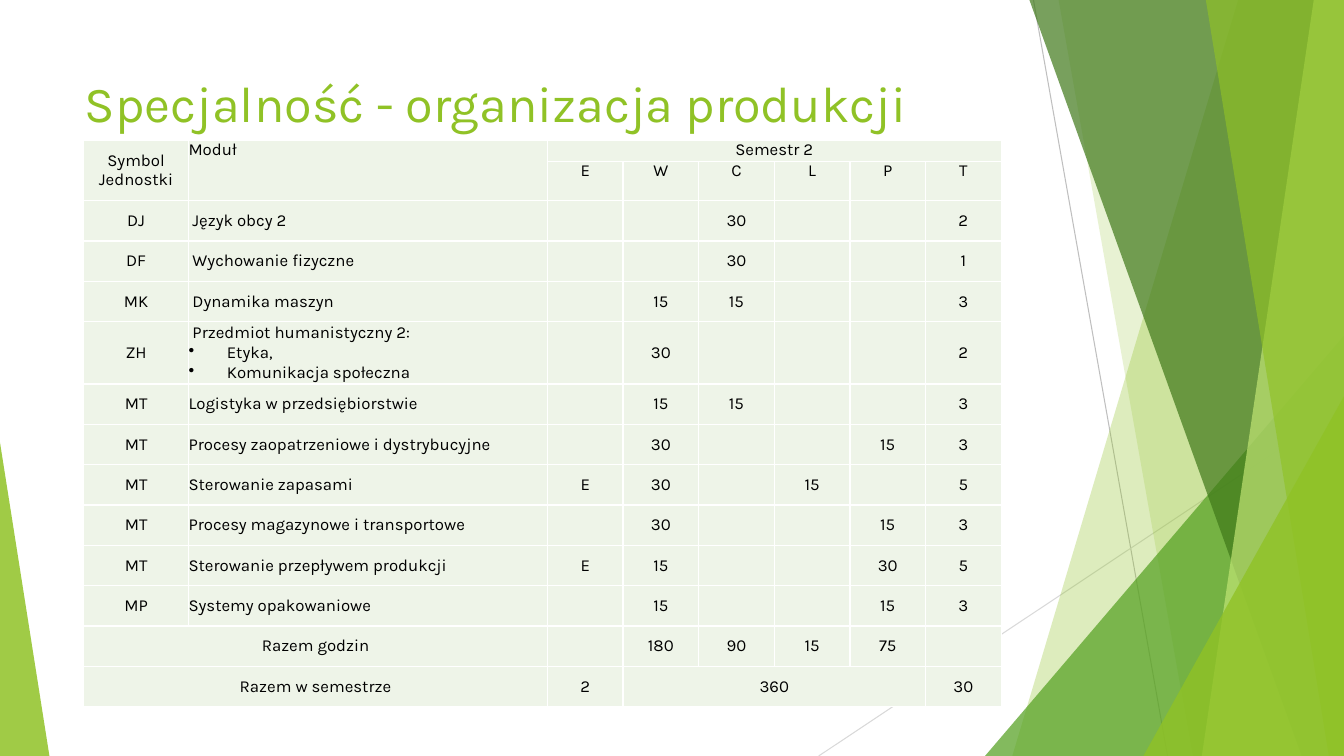
from dataclasses import dataclass

from lxml import etree
from pptx import Presentation
from pptx.dml.color import RGBColor
from pptx.enum.shapes import MSO_CONNECTOR, MSO_SHAPE
from pptx.enum.text import MSO_ANCHOR, MSO_AUTO_SIZE, PP_ALIGN
from pptx.oxml.ns import qn
from pptx.util import Inches, Pt

STRAIGHT = MSO_CONNECTOR.STRAIGHT
TRIANGLE = MSO_SHAPE.ISOSCELES_TRIANGLE
TOP, MIDDLE = MSO_ANCHOR.TOP, MSO_ANCHOR.MIDDLE
LEFT, CENTER = PP_ALIGN.LEFT, PP_ALIGN.CENTER
NO_AUTOFIT = MSO_AUTO_SIZE.NONE

FONT = "Karla"
GREEN, DARK, MID, PALE = "90C226", "3F7819", "54A021", "C0E474"
CELL_FILL, WHITE, BLACK = "EEF4E8", "FFFFFF", "000000"

HAIRLINES = [(10.25, 0, 11.58, 7.5, "BFBFBF"), (13.33, 4.03, 8.12, 7.5, "D9D9D9")]
BACK_RIBBONS = [(12.28, 10.04, GREEN, 30), (10.5, 11.83, GREEN, 20)]
BACK_TRIANGLES = [(9.77, 3.33, 3.56, 1, MID, 72)]
FRONT_RIBBONS = [(10.21, 12.91, DARK, 70), (13.03, 11.92, PALE, 70), (11.96, 13.18, GREEN, 65)]
FRONT_TRIANGLES = [(11.34, 3.93, 1.99, 1, GREEN, 80), (0, 4.39, 0.49, 0, GREEN, 85)]

COLUMN_WIDTHS = [1.04, 3.56] + [0.75] * 6
ROW_HEIGHTS = [0.21] * 2 + [0.4] * 3 + [0.62] + [0.4] * 8
MERGES = [(0, 0, 1, 0), (0, 1, 1, 1), (0, 2, 0, 7), (12, 0, 12, 1), (13, 0, 13, 1), (13, 3, 13, 6)]
HEADER_ROWS = 2
TOTAL_ROWS = 2
ROWS = [
    ["Symbol\vJednostki", "Moduł", "Semestr 2", "", "", "", "", ""],
    ["", "", "E", "W", "C", "L", "P", "T"],
    ["DJ", " Język obcy 2", "", "", "30", "", "", "2"],
    ["DF", " Wychowanie fizyczne", "", "", "30", "", "", "1"],
    ["MK", " Dynamika maszyn", "", "15", "15", "", "", "3"],
    ["ZH", " Przedmiot humanistyczny 2:\nEtyka,\nKomunikacja społeczna", "", "30", "", "", "", "2"],
    ["MT", "Logistyka w przedsiębiorstwie", "", "15", "15", "", "", "3"],
    ["MT", "Procesy zaopatrzeniowe i dystrybucyjne", "", "30", "", "", "15", "3"],
    ["MT", "Sterowanie zapasami", "E", "30", "", "15", "", "5"],
    ["MT", "Procesy magazynowe i transportowe", "", "30", "", "", "15", "3"],
    ["MT", "Sterowanie przepływem produkcji", "E", "15", "", "", "30", "5"],
    ["MP", "Systemy opakowaniowe", "", "15", "", "", "15", "3"],
    ["Razem godzin", "", "", "180", "90", "15", "75", ""],
    ["Razem w semestrze", "", "2", "360", "", "", "", "30"],
]


@dataclass
class Box:
    left: float
    top: float
    width: float
    height: float

    def place(self, x, y):
        return Inches(self.left + x), Inches(self.top + y)


def color(value):
    return RGBColor.from_string(value)


def apply(target, **values):
    for name, value in values.items():
        setattr(target, name, value)


def style_runs(para, size, shade):
    for span in para.runs:
        apply(span.font, name=FONT, size=Pt(size))
        span.font.color.rgb = color(shade)


def paint(shape, shade, opacity):
    shape.shadow.inherit = False
    shape.line.fill.background()
    shape.fill.solid()
    shape.fill.fore_color.rgb = color(shade)
    tint = shape.fill._xPr.find(qn("a:solidFill"))[0]
    etree.SubElement(tint, qn("a:alpha"), val=str(opacity * 1000))


def add_hairlines(group, box):
    for x1, y1, x2, y2, shade in HAIRLINES:
        line = group.shapes.add_connector(STRAIGHT, *box.place(x1, y1), *box.place(x2, y2))
        line.line.width = Pt(0.75)
        line.line.color.rgb = color(shade)
        etree.SubElement(line._element.spPr, qn("a:effectLst"))


def add_ribbons(group, box, ribbons):
    for top_x, bottom_x, shade, opacity in ribbons:
        outline = group.shapes.build_freeform(*box.place(top_x, 0), scale=1.0)
        corners = [(box.width, 0), (box.width, box.height), (bottom_x, box.height)]
        outline.add_line_segments([box.place(*corner) for corner in corners], close=True)
        paint(outline.convert_to_shape(), shade, opacity)


def add_triangles(group, box, triangles):
    for x, y, width, apex, shade, opacity in triangles:
        triangle = group.shapes.add_shape(
            TRIANGLE, *box.place(x, y), Inches(width), Inches(box.height - y))
        triangle.adjustments[0] = apex
        paint(triangle, shade, opacity)


def add_backdrop(page, box):
    group = page.shapes.add_group_shape()
    add_hairlines(group, box)
    add_ribbons(group, box, BACK_RIBBONS)
    add_triangles(group, box, BACK_TRIANGLES)
    add_ribbons(group, box, FRONT_RIBBONS)
    add_triangles(group, box, FRONT_TRIANGLES)


def add_title(page, box, text):
    title = page.shapes.title
    apply(title, left=Inches(box.left), top=Inches(box.top),
          width=Inches(box.width), height=Inches(box.height))
    frame = title.text_frame
    apply(frame, text=text, word_wrap=True, auto_size=NO_AUTOFIT, vertical_anchor=TOP)
    frame.paragraphs[0].alignment = LEFT
    style_runs(frame.paragraphs[0], 36, GREEN)


def add_bullet(para):
    props = para._p.get_or_add_pPr()
    props.set("marL", str(Inches(0.38)))
    props.set("indent", str(Inches(-0.38)))
    etree.SubElement(props, qn("a:buChar"), char="•")


def add_borders(cell):
    props = cell._tc.get_or_add_tcPr()
    for index, side in enumerate(("lnL", "lnR", "lnT", "lnB")):
        line = etree.Element(qn("a:" + side), w=str(Pt(1)))
        fill = etree.SubElement(line, qn("a:solidFill"))
        etree.SubElement(fill, qn("a:srgbClr"), val=WHITE)
        props.insert(index, line)


def cell_spacing(row, column):
    if row < HEADER_ROWS:
        return {0: (4, 2), 1: (9, 0)}.get(column, (2, 2))
    if row >= len(ROWS) - TOTAL_ROWS:
        return 1, 1
    return 0.5, 0.5


def fill_cell(cell, row, column, text):
    apply(cell, margin_left=0, margin_right=0, margin_top=0, margin_bottom=0,
          vertical_anchor=TOP if row < HEADER_ROWS and column else MIDDLE)
    cell.fill.solid()
    cell.fill.fore_color.rgb = color(CELL_FILL)
    add_borders(cell)
    if not text:
        return
    cell.text_frame.text = text
    paras = cell.text_frame.paragraphs
    before, after = (0, 0) if len(paras) > 1 else cell_spacing(row, column)
    for index, para in enumerate(paras):
        apply(para, alignment=LEFT if column == 1 else CENTER,
              space_before=Pt(before), space_after=Pt(after))
        style_runs(para, 12, BLACK)
        if index:
            add_bullet(para)


def add_module_table(page, box):
    frame = page.shapes.add_table(
        len(ROWS), len(COLUMN_WIDTHS), *box.place(0, 0), Inches(box.width), Inches(box.height))
    table = frame.table
    apply(table, first_row=False, horz_banding=False)
    for column, width in zip(table.columns, COLUMN_WIDTHS):
        column.width = Inches(width)
    for row, height in zip(table.rows, ROW_HEIGHTS):
        row.height = Inches(height)
    for row, texts in enumerate(ROWS):
        for column, text in enumerate(texts):
            fill_cell(table.cell(row, column), row, column, text)
    for top, left, bottom, right in MERGES:
        table.cell(top, left).merge(table.cell(bottom, right))


def main():
    deck = Presentation()
    apply(deck, slide_width=Inches(13.33), slide_height=Inches(7.5))
    page = deck.slides.add_slide(deck.slide_layouts[5])
    add_backdrop(page, Box(0, 0, 13.33, 7.5))
    add_title(page, Box(0.74, 0.67, 9.4, 1.44), "Specjalność - organizacja produkcji")
    add_module_table(page, Box(0.83, 1.39, sum(COLUMN_WIDTHS), sum(ROW_HEIGHTS)))
    deck.save("out.pptx")


if __name__ == "__main__":
    main()
